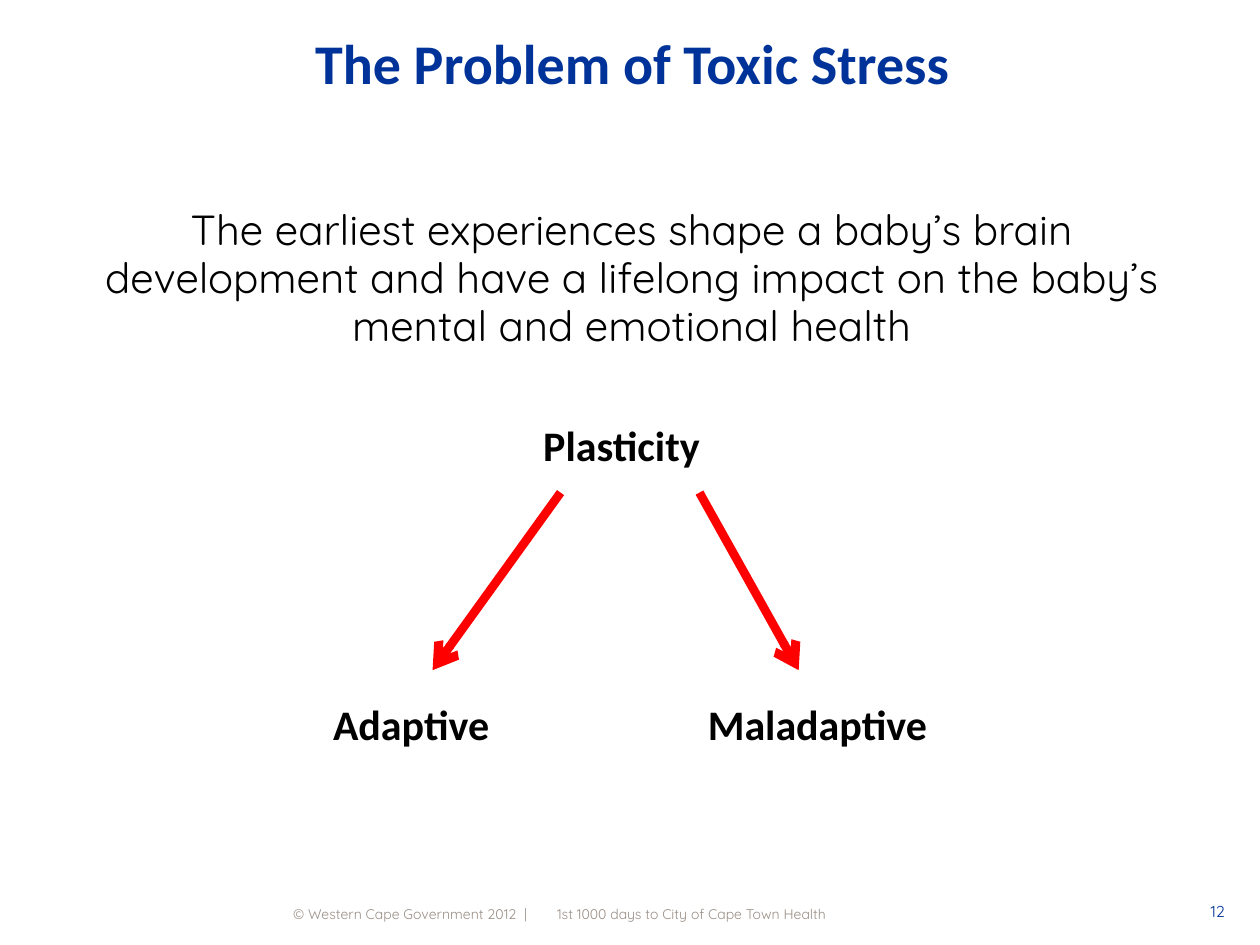
from lxml import etree
from pptx import Presentation
from pptx.dml.color import RGBColor
from pptx.enum.shapes import MSO_CONNECTOR
from pptx.enum.text import MSO_ANCHOR as Anchor, PP_ALIGN as Align
from pptx.oxml.ns import qn
from pptx.util import Cm, Pt

BLUE = RGBColor(0x00, 0x33, 0x99)
BLACK = RGBColor(0x00, 0x00, 0x00)
GREY = RGBColor(0x99, 0x8F, 0x86)
RED = RGBColor(0xFF, 0x00, 0x00)
HEADING_FONT, BODY_FONT = "Calibri", "Quicksand"
INSET = 0.2


def set_text(box, text, size, color, font=BODY_FONT, bold=False,
             align=Align.LEFT, anchor=Anchor.MIDDLE, insets=(INSET,) * 4):
    """Fill a box with one paragraph; insets run left, top, right, bottom."""
    frame = box.text_frame
    frame.word_wrap = True
    frame.vertical_anchor = anchor
    (frame.margin_left, frame.margin_top,
     frame.margin_right, frame.margin_bottom) = map(Cm, insets)
    para = frame.paragraphs[0]
    para.text = text
    para.alignment = align
    para.font.name = font
    para.font.size = Pt(size)
    para.font.bold = bold
    para.font.color.rgb = color
    return para


def add_text(page, left, top, width, height, *args, **style):
    box = page.shapes.add_textbox(Cm(left), Cm(top), Cm(width), Cm(height))
    return set_text(box, *args, **style)


def add_arrow(page, x1, y1, x2, y2):
    arrow = page.shapes.add_connector(
        MSO_CONNECTOR.STRAIGHT, Cm(x1), Cm(y1), Cm(x2), Cm(y2))
    arrow.line.color.rgb = RED
    arrow.line.width = Pt(5)
    etree.SubElement(arrow.line._get_or_add_ln(), qn("a:tailEnd"), type="arrow")
    etree.SubElement(arrow._element.spPr, qn("a:effectLst"))


def place_title(page, left, top, width, height):
    title = page.shapes.title
    title.left, title.top = Cm(left), Cm(top)
    title.width, title.height = Cm(width), Cm(height)
    set_text(title, "The Problem of Toxic Stress", 32, BLUE,
             font=HEADING_FONT, bold=True, align=Align.CENTER)


def place_statement(page, left, top, width, height):
    para = add_text(
        page, left, top, width, height,
        "The earliest experiences shape a baby’s brain development and have "
        "a lifelong impact on the baby’s mental and emotional health",
        24, BLACK, align=Align.CENTER, anchor=Anchor.TOP)
    para.line_spacing = 0.95


def place_plasticity_tree(page, left, top, width, height):
    label_width, label_height = 6, 1.4
    # Labels, by centre: the root on top, its two outcomes at the bottom
    first_row, last_row = top + label_height / 2, top + height - label_height / 2
    for text, center, middle in (
        ("Plasticity", left + 6.24, first_row),
        ("Adaptive", left + 2, last_row),
        ("Maladaptive", left + 10.19, last_row),
    ):
        add_text(page, center - label_width / 2, middle - label_height / 2,
                 label_width, label_height, text, 24, BLACK,
                 font=HEADING_FONT, bold=True, align=Align.CENTER)

    # Arrows from the root to each outcome
    arrow_top, arrow_bottom = top + 1.67, top + 5.25
    for start, end in ((5.01, 2.43), (7.81, 9.81)):
        add_arrow(page, left + start, arrow_top, left + end, arrow_bottom)


def place_footer(page, left, top, width, height):
    add_text(page, left, top, 5.41, height, "© Western Cape Government 2012  |",
             8, GREY, anchor=Anchor.BOTTOM, insets=(INSET, INSET, 0, 0))
    add_text(page, left + 5.52, top, 11.5, height,
             "1st 1000 days to City of Cape Town Health",
             8, GREY, anchor=Anchor.BOTTOM, insets=(0, INSET, INSET, 0))
    number_width = 1.42
    add_text(page, left + width - number_width, top, number_width, height, "12",
             9, BLUE, align=Align.RIGHT, insets=(INSET, INSET, 0, 0))


def main():
    deck = Presentation()
    deck.slide_width, deck.slide_height = Cm(25.4), Cm(19.05)
    page = deck.slides.add_slide(deck.slide_layouts.get_by_name("Title Only"))
    place_title(page, 0.81, 0, 23.88, 2.51)
    place_statement(page, 1.3, 3.98, 22.86, 3.6)
    place_plasticity_tree(page, 6.29, 8.26, 12.5, 7.03)
    place_footer(page, 5.71, 17.96, 18.98, 0.63)
    deck.save("out.pptx")


if __name__ == "__main__":
    main()
